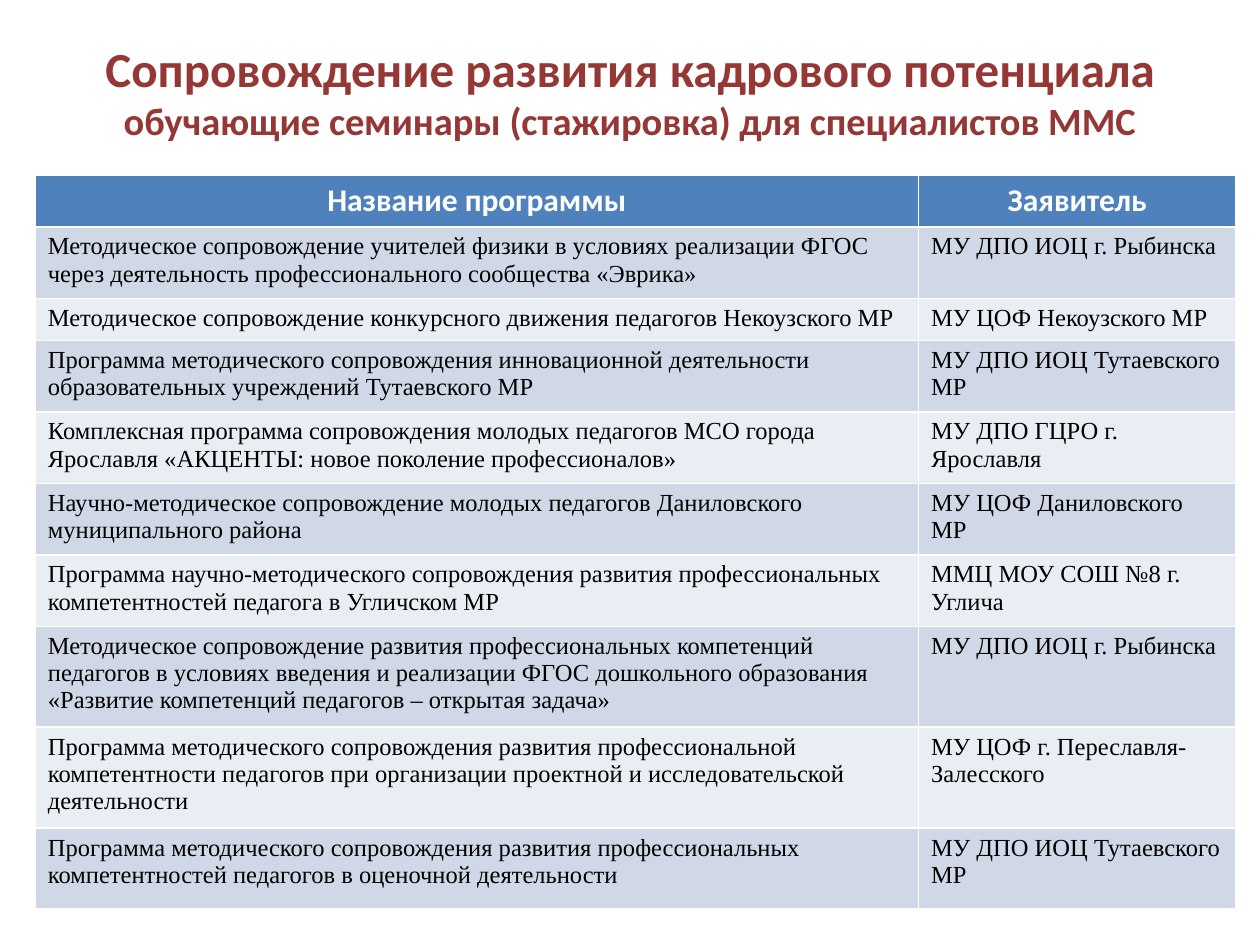
from pptx import Presentation
from pptx.dml.color import RGBColor
from pptx.enum.text import MSO_ANCHOR, PP_ALIGN
from pptx.util import Inches, Pt

MID, CENTER, LEFT = MSO_ANCHOR.MIDDLE, PP_ALIGN.CENTER, PP_ALIGN.LEFT
RED = RGBColor(0x95, 0x37, 0x35)
BLUE = RGBColor(0x4F, 0x81, 0xBD)
WHITE = RGBColor(0xFF, 0xFF, 0xFF)
BLACK = RGBColor(0, 0, 0)
BANDS = (RGBColor(0xE9, 0xED, 0xF4), RGBColor(0xD0, 0xD8, 0xE8))

WIDTH, HEIGHT = 10, 7.5
TITLE = (
    ("Сопровождение развития кадрового потенциала ", 28),
    ("обучающие семинары (стажировка) для специалистов ММС", 22),
)
COLS = (7.01, 2.52)
# Row height in inches, programme, applicant
ROWS = (
    (0.41, "Название программы", "Заявитель"),
    (0.54, "Методическое сопровождение учителей физики в условиях реализации ФГОС "
     "через деятельность профессионального сообщества «Эврика»",
     "МУ ДПО ИОЦ г. Рыбинска"),
    (0.32, "Методическое сопровождение конкурсного движения педагогов Некоузского МР",
     "МУ ЦОФ Некоузского МР"),
    (0.54, "Программа методического сопровождения инновационной деятельности "
     "образовательных учреждений Тутаевского МР",
     "МУ ДПО ИОЦ Тутаевского МР"),
    (0.54, "Комплексная программа сопровождения молодых педагогов МСО города "
     "Ярославля «АКЦЕНТЫ: новое поколение профессионалов»",
     "МУ ДПО ГЦРО г. Ярославля"),
    (0.54, "Научно-методическое сопровождение молодых педагогов Даниловского "
     "муниципального района",
     "МУ ЦОФ Даниловского МР"),
    (0.54, "Программа научно-методического сопровождения развития профессиональных "
     "компетентностей педагога в Угличском МР",
     "ММЦ МОУ СОШ №8 г. Углича"),
    (0.76, "Методическое сопровождение развития профессиональных компетенций "
     "педагогов в условиях введения и реализации ФГОС дошкольного образования "
     "«Развитие компетенций педагогов – открытая задача»",
     "МУ ДПО ИОЦ г. Рыбинска"),
    (0.76, "Программа методического сопровождения развития профессиональной "
     "компетентности педагогов при организации проектной и исследовательской "
     "деятельности",
     "МУ ЦОФ г. Переславля-Залесского"),
    (0.64, "Программа методического сопровождения развития профессиональных "
     "компетентностей педагогов в оценочной деятельности",
     "МУ ДПО ИОЦ Тутаевского МР"),
)


def style(run, face, size, color, bold):
    font = run.font
    font.name, font.size, font.bold = face, Pt(size), bold
    font.color.rgb = color


def add_title(slide, box):
    frame = slide.shapes.add_textbox(*map(Inches, box)).text_frame
    frame.word_wrap = True
    frame.vertical_anchor = MID
    para = frame.paragraphs[0]
    para.alignment = CENTER
    for text, size in TITLE:
        run = para.add_run()
        run.text = text
        style(run, "Calibri", size, RED, True)


def fill_cell(cell, text, row):
    head = row == 0
    cell.fill.solid()
    cell.fill.fore_color.rgb = BLUE if head else BANDS[row % 2]
    cell.text_frame.text = text
    para = cell.text_frame.paragraphs[0]
    para.alignment = CENTER if head else LEFT
    look = ("Calibri", 18, WHITE, True) if head else ("Times New Roman", 14, BLACK, False)
    style(para.runs[0], *look)


def add_grid(slide, box):
    # The default table style supplies the white rules
    left, top, width, height = box
    table = slide.shapes.add_table(
        len(ROWS), len(COLS), *map(Inches, box)).table
    for col, share in zip(table.columns, COLS):
        col.width = Inches(width * share / sum(COLS))
    total = sum(row[0] for row in ROWS)
    for i, (tall, *texts) in enumerate(ROWS):
        table.rows[i].height = Inches(height * tall / total)
        for j, text in enumerate(texts):
            fill_cell(table.cell(i, j), text, i)


def main():
    deck = Presentation()
    deck.slide_width, deck.slide_height = Inches(WIDTH), Inches(HEIGHT)
    slide = deck.slides.add_slide(deck.slide_layouts[6])
    add_title(slide, (0.5, 0.21, WIDTH - 1, 1.02))
    add_grid(slide, (0.28, 1.39, sum(COLS), sum(row[0] for row in ROWS)))
    deck.save("out.pptx")


if __name__ == "__main__":
    main()
